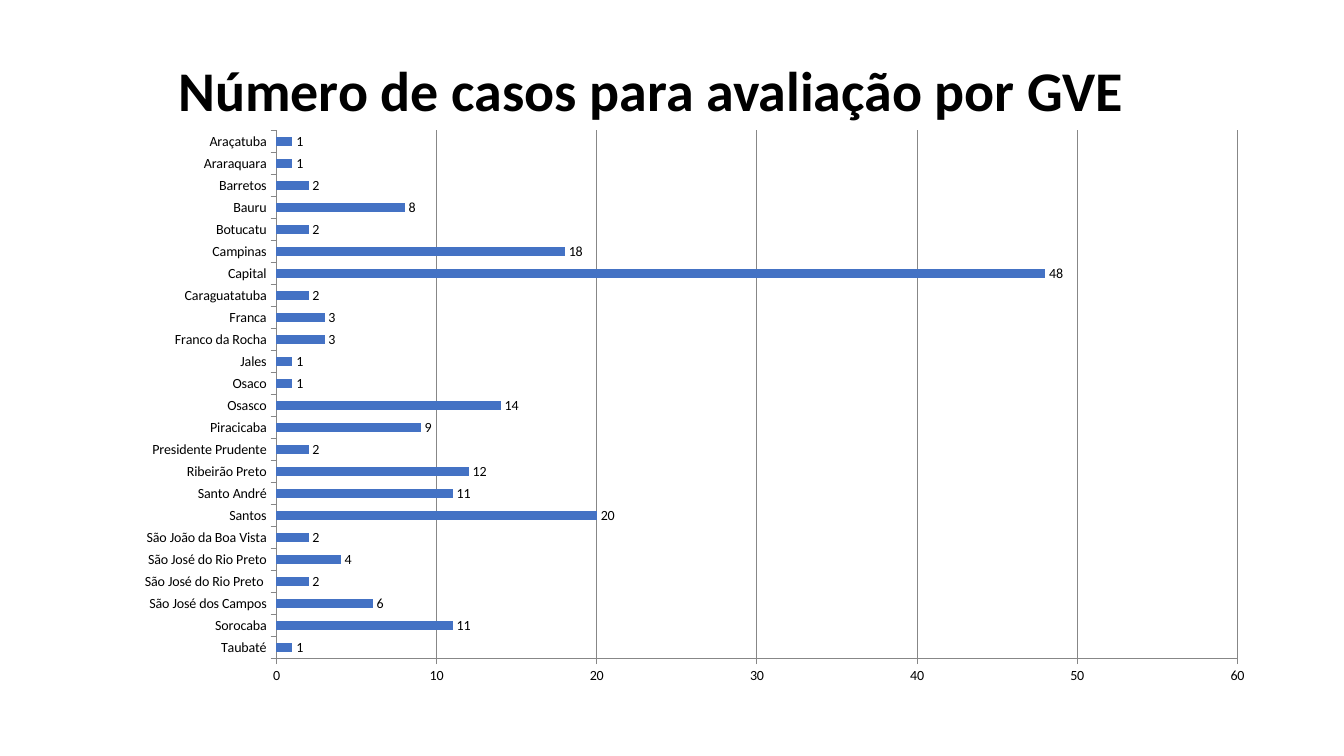
from pptx import Presentation
from pptx.chart.data import CategoryChartData
from pptx.dml.color import RGBColor
from pptx.enum.chart import XL_CHART_TYPE, XL_LABEL_POSITION, XL_TICK_MARK
from pptx.enum.text import MSO_ANCHOR, PP_ALIGN
from pptx.util import Inches, Pt

TITLE = "Número de casos para avaliação por GVE"
CASES = [
    ("Taubaté", 1),
    ("Sorocaba", 11),
    ("São José dos Campos", 6),
    ("São José do Rio Preto ", 2),
    ("São José do Rio Preto", 4),
    ("São João da Boa Vista", 2),
    ("Santos", 20),
    ("Santo André", 11),
    ("Ribeirão Preto", 12),
    ("Presidente Prudente", 2),
    ("Piracicaba", 9),
    ("Osasco", 14),
    ("Osaco", 1),
    ("Jales", 1),
    ("Franco da Rocha", 3),
    ("Franca", 3),
    ("Caraguatatuba", 2),
    ("Capital", 48),
    ("Campinas", 18),
    ("Botucatu", 2),
    ("Bauru", 8),
    ("Barretos", 2),
    ("Araraquara", 1),
    ("Araçatuba", 1),
]
FONT, BLACK, BLUE, GRAY = "Calibri", "000000", "4472C4", "878787"
TITLE_BOX = (1.67, 0.5, 9.68, 0.77)
CHART_BOX = (1.21, 1.18, 11.36, 5.72)


def color(value):
    return RGBColor.from_string(value)


def style_font(font, size, bold=False):
    font.name, font.size, font.bold = FONT, Pt(size), bold
    font.color.rgb = color(BLACK)


def style_line(line):
    line.color.rgb = color(GRAY)
    line.width = Pt(0.75)


def add_title(slide):
    title = slide.shapes.title
    title.left, title.top, title.width, title.height = map(Inches, TITLE_BOX)
    frame = title.text_frame
    frame.text = TITLE
    frame.word_wrap = True
    frame.vertical_anchor = MSO_ANCHOR.TOP
    paragraph = frame.paragraphs[0]
    paragraph.alignment = PP_ALIGN.LEFT
    style_font(paragraph.font, 40, bold=True)


def add_cases_chart(slide):
    data = CategoryChartData()
    data.categories = [region for region, count in CASES]
    data.add_series("Series 1", [count for region, count in CASES])
    chart = slide.shapes.add_chart(
        XL_CHART_TYPE.BAR_CLUSTERED, *map(Inches, CHART_BOX), data
    ).chart
    chart.has_legend = False
    chart.has_title = False
    style_font(chart.font, 10)

    for axis in (chart.category_axis, chart.value_axis):
        axis.major_tick_mark = XL_TICK_MARK.OUTSIDE
        axis.minor_tick_mark = XL_TICK_MARK.NONE
        style_line(axis.format.line)
    chart.category_axis.has_major_gridlines = False
    value_axis = chart.value_axis
    value_axis.minimum_scale, value_axis.maximum_scale = 0, 60
    value_axis.major_unit = 10
    value_axis.has_major_gridlines = True
    style_line(value_axis.major_gridlines.format.line)

    plot = chart.plots[0]
    plot.gap_width = 150
    plot.vary_by_categories = False
    fill = plot.series[0].format.fill
    fill.solid()
    fill.fore_color.rgb = color(BLUE)
    plot.has_data_labels = True
    labels = plot.data_labels
    labels.show_value = True
    labels.position = XL_LABEL_POSITION.OUTSIDE_END
    style_font(labels.font, 10)


def main():
    presentation = Presentation()
    presentation.slide_width = Inches(13.33)
    presentation.slide_height = Inches(7.5)
    slide = presentation.slides.add_slide(presentation.slide_layouts[5])
    add_cases_chart(slide)
    add_title(slide)
    presentation.save("out.pptx")


if __name__ == "__main__":
    main()
